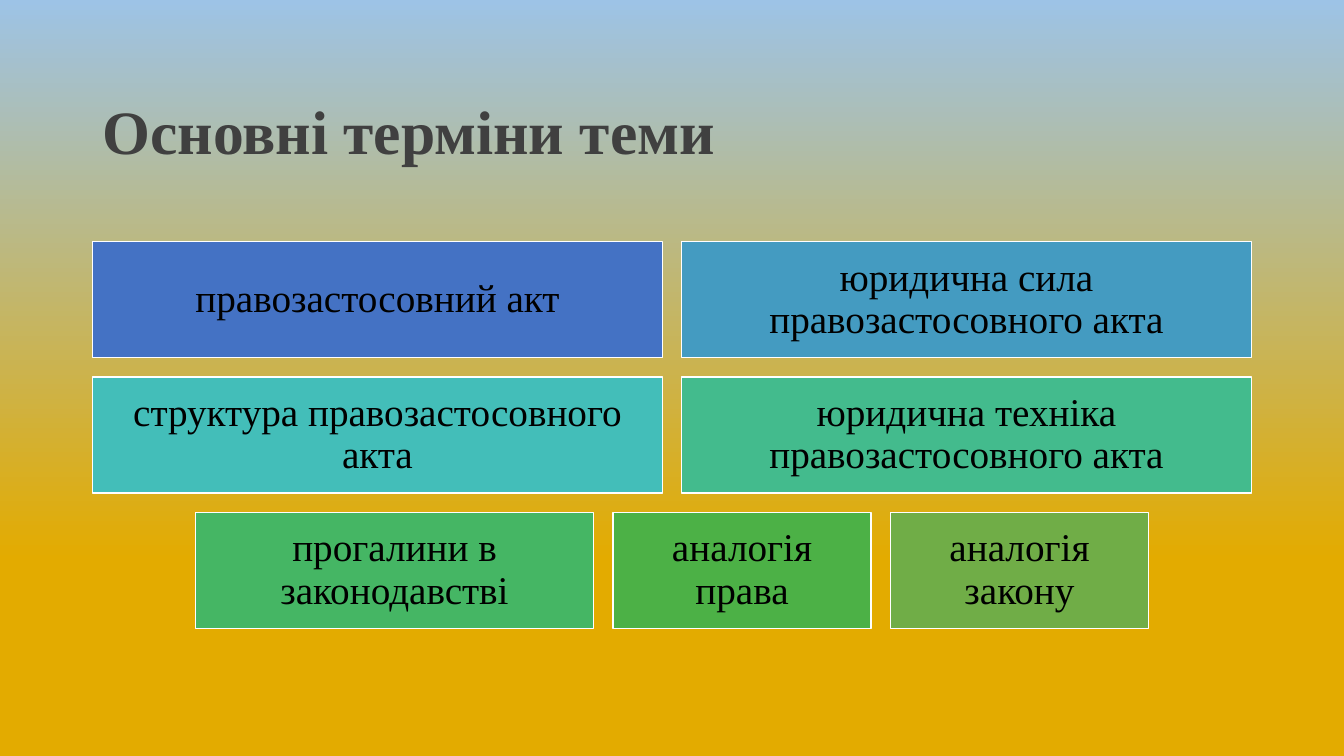
from pptx import Presentation
from pptx.dml.color import RGBColor
from pptx.enum.shapes import MSO_SHAPE
from pptx.enum.text import MSO_ANCHOR, MSO_AUTO_SIZE, PP_ALIGN
from pptx.util import Pt

RECT = MSO_SHAPE.RECTANGLE
MIDDLE = MSO_ANCHOR.MIDDLE
NO_FIT = MSO_AUTO_SIZE.NONE
LEFT, CENTER = PP_ALIGN.LEFT, PP_ALIGN.CENTER

COLORS = {
    "sky": "9DC3E6", "gold": "E3AB00", "title": "404040", "text": "000000",
    "border": "FFFFFF", "blue": "4472C4", "azure": "449BC1", "teal": "43BEB9",
    "mint": "43BB8D", "green": "45B664", "leaf": "4CB146", "olive": "70AD47",
}
FONT = "Times New Roman"
TITLE_FONT = {"name": FONT, "size": Pt(44), "bold": True}
TERM_FONT = {"name": FONT, "size": Pt(28), "bold": False}

ROW_HEIGHT, GAP = 83, 13.7
# Each row of tiles: text, width, fill
TERM_ROWS = [
    [("правозастосовний акт", 407, "blue"),
     ("юридична сила правозастосовного акта", 407, "azure")],
    [("структура правозастосовного акта", 407, "teal"),
     ("юридична техніка правозастосовного акта", 407, "mint")],
    [("прогалини в законодавстві", 284.5, "green"),
     ("аналогія права", 184.5, "leaf"),
     ("аналогія закону", 184.5, "olive")],
]


def rgb(name):
    return RGBColor.from_string(COLORS[name])


def write_text(tf, text, font, color, align):
    for key, value in {"word_wrap": True, "auto_size": NO_FIT,
                       "vertical_anchor": MIDDLE}.items():
        setattr(tf, key, value)
    p = tf.paragraphs[0]
    p.alignment = align
    p.line_spacing = 0.9
    r = p.add_run()
    r.text = text
    for key, value in font.items():
        setattr(r.font, key, value)
    r.font.color.rgb = rgb(color)


def paint_background(s):
    fill = s.background.fill
    fill.gradient()
    fill.gradient_angle = 90
    stops = [(0.26, "gold"), (1, "sky")]
    for stop, (position, color) in zip(fill.gradient_stops, stops):
        stop.position = position
        stop.color.rgb = rgb(color)


def add_title(s, left, top, width, height):
    sp = s.shapes.title
    sp.left, sp.top, sp.width, sp.height = map(Pt, (left, top, width, height))
    write_text(sp.text_frame, "Основні терміни теми", TITLE_FONT, "title", LEFT)


def add_tile(s, left, top, width, height, text, color):
    sp = s.shapes.add_shape(RECT, *map(Pt, (left, top, width, height)))
    sp.shadow.inherit = False
    sp.fill.solid()
    sp.fill.fore_color.rgb = rgb(color)
    sp.line.color.rgb = rgb("border")
    sp.line.width = Pt(1)
    tf = sp.text_frame
    for side in ("left", "top", "right", "bottom"):
        setattr(tf, f"margin_{side}", Pt(8.4))
    write_text(tf, text, TERM_FONT, "text", CENTER)


def add_terms(s, left, top, width):
    for i, row in enumerate(TERM_ROWS):
        # Centre each row in the region
        row_width = sum(tile[1] for tile in row) + GAP * (len(row) - 1)
        x = left + (width - row_width) / 2
        y = top + i * (ROW_HEIGHT + GAP)
        for text, tile_width, color in row:
            add_tile(s, x, y, tile_width, ROW_HEIGHT, text, color)
            x += tile_width + GAP


def main():
    prs = Presentation()
    prs.slide_width, prs.slide_height = Pt(960), Pt(540)
    s = prs.slides.add_slide(prs.slide_layouts[5])
    paint_background(s)
    add_title(s, 66, 44, 828, 104.4)
    add_terms(s, 66, 172.5, 828)
    prs.save("out.pptx")


if __name__ == "__main__":
    main()
